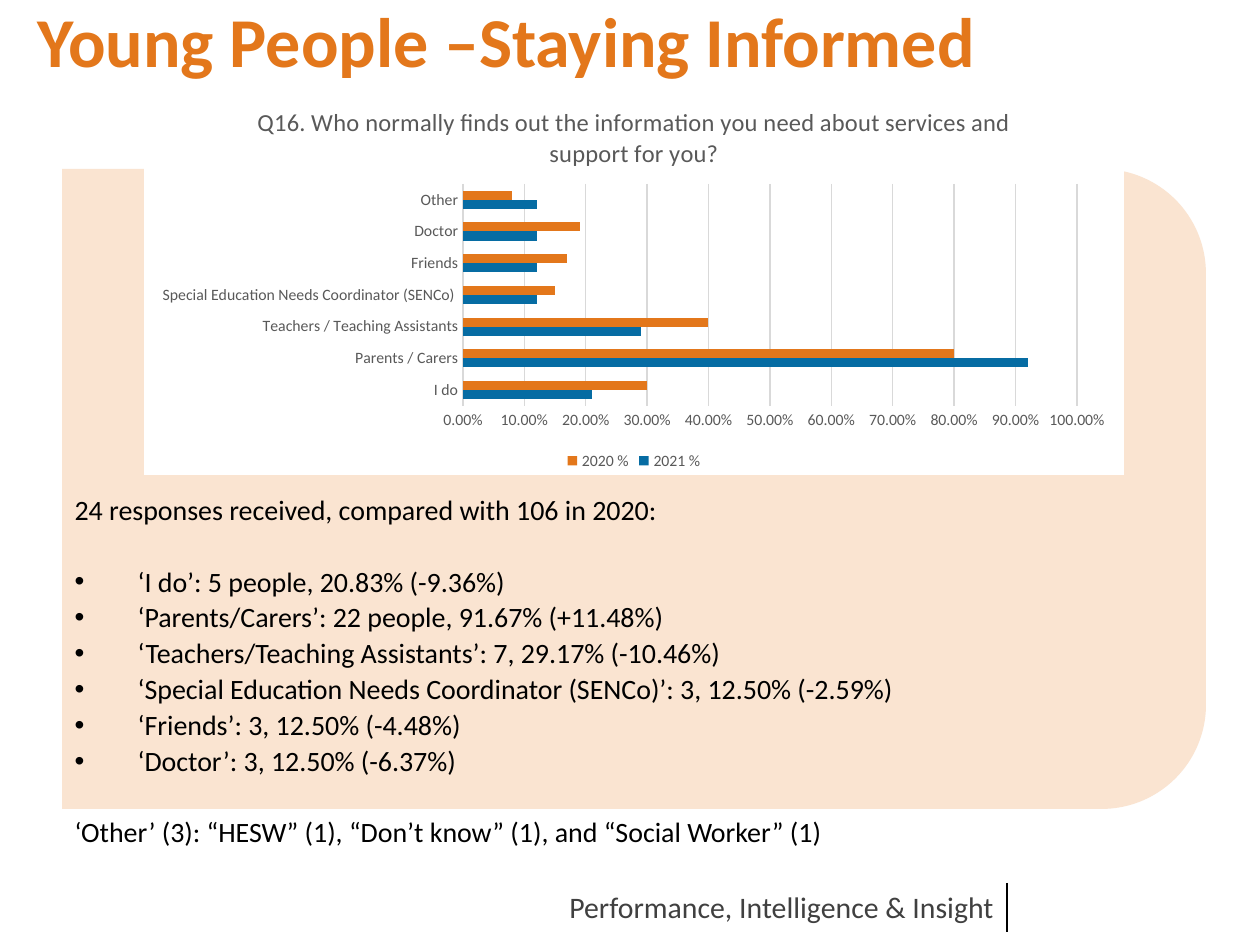
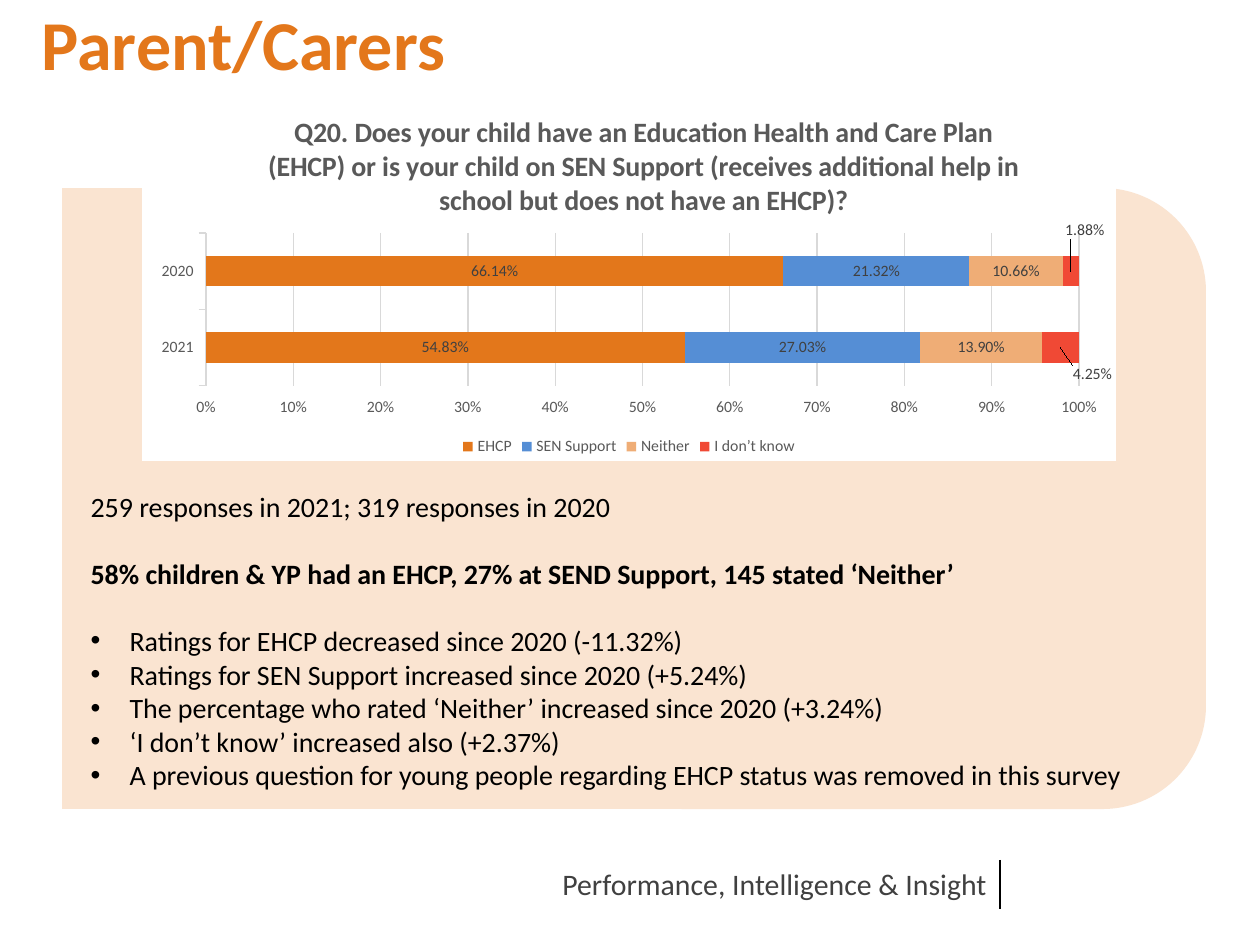
from dataclasses import dataclass

from lxml import etree
from pptx import Presentation
from pptx.chart.chart import Chart
from pptx.chart.data import CategoryChartData
from pptx.dml.color import RGBColor
from pptx.enum.chart import XL_CHART_TYPE as ChartType
from pptx.enum.chart import XL_LABEL_POSITION as LabelPosition
from pptx.enum.chart import XL_LEGEND_POSITION as LegendPosition
from pptx.enum.chart import XL_TICK_MARK as TickMark
from pptx.enum.shapes import MSO_CONNECTOR as Connector
from pptx.enum.shapes import MSO_SHAPE as Shape
from pptx.enum.text import MSO_ANCHOR as Anchor
from pptx.enum.text import MSO_AUTO_SIZE as AutoSize
from pptx.enum.text import PP_ALIGN as Align
from pptx.oxml import parse_xml
from pptx.oxml.ns import nsdecls, qn
from pptx.slide import Slide
from pptx.text.text import Font
from pptx.util import Emu, Pt

# Shared style
FONT = "Calibri"
ORANGE = RGBColor(0xE3, 0x77, 0x1B)
PEACH = RGBColor(0xFA, 0xE4, 0xD1)
BLUE = RGBColor(0x06, 0x6C, 0xA3)
SKY = RGBColor(0x55, 0x8E, 0xD5)
APRICOT = RGBColor(0xEF, 0xAD, 0x76)
RED = RGBColor(0xF0, 0x49, 0x35)
BLACK = RGBColor(0, 0, 0)
CHARCOAL = RGBColor(0x40, 0x40, 0x40)
GREY = RGBColor(0x59, 0x59, 0x59)
GRID_GREY = RGBColor(0xD9, 0xD9, 0xD9)

PX_PER_INCH = 126
PANEL_LEFT, PANEL_RIGHT, PANEL_BOTTOM = 62, 1206, 809
FOOTER_TEXT = "Performance, Intelligence & Insight"
NO_LEADERS = (
    f'<c:extLst {nsdecls("c")}><c:ext uri="{{CE6537A1-D6FC-4f65-9D91-7224C49458BB}}" '
    'xmlns:c15="http://schemas.microsoft.com/office/drawing/2012/chart">'
    '<c15:showLeaderLines val="0"/></c:ext></c:extLst>')


def px(length: int) -> Emu:
    return Emu(round(length * 914400 / PX_PER_INCH))


@dataclass
class Box:
    left: int
    top: int
    width: int
    height: int

    def emu(self) -> tuple[Emu, Emu, Emu, Emu]:
        return px(self.left), px(self.top), px(self.width), px(self.height)


@dataclass
class Line:
    text: str
    bullet: bool = False
    bold: bool = False
    new_block: bool = False


@dataclass
class BodyStyle:
    box: Box
    indent: int
    line_spacing: float
    gap: float
    block_gap: float


@dataclass
class Series:
    name: str
    values: tuple[float, ...]
    color: RGBColor


@dataclass
class Question:
    """Title, plot and label offsets are px inside the chart box."""
    box: Box
    kind: ChartType
    title: str
    title_size: int
    title_bold: bool
    title_at: tuple[int, int]
    plot: Box
    tick: TickMark
    axis_format: str
    categories: tuple[str, ...]
    series: tuple[Series, ...]
    # (point index, x shift, y shift) for labels of the last series
    moved_labels: tuple[tuple[int, int, int], ...] = ()


@dataclass
class Page:
    title: str
    title_box: Box
    panel_top: int
    footer_left: int
    footer_top: int
    question: Question
    body_style: BodyStyle
    lines: tuple[Line, ...]


def style(font: Font, size: int, color: RGBColor, bold: bool = False) -> None:
    font.name, font.size, font.bold = FONT, Pt(size), bold
    font.color.rgb = color


# Panel, footer and text
def draw_panel(slide: Slide, top: int) -> None:
    height = PANEL_BOTTOM - top
    halves = ((Shape.RECTANGLE, PANEL_LEFT, 813),
              (Shape.ROUNDED_RECTANGLE, 580, PANEL_RIGHT - 580))
    for kind, left, width in halves:
        half = slide.shapes.add_shape(kind, *Box(left, top, width, height).emu())
        half.shadow.inherit = False
        half.fill.solid()
        half.fill.fore_color.rgb = PEACH
        half.line.fill.background()


def draw_footer(slide: Slide, left: int, top: int) -> None:
    frame = slide.shapes.add_textbox(*Box(left, top, 518, 49).emu()).text_frame
    frame.word_wrap = True
    frame.text = FOOTER_TEXT
    frame.paragraphs[0].alignment = Align.JUSTIFY
    style(frame.paragraphs[0].font, 17, CHARCOAL)
    x = px(left + 450)
    rule = slide.shapes.add_connector(Connector.STRAIGHT, x, px(top), x, px(top + 49))
    rule.line.color.rgb = BLACK
    rule.line.width = Pt(0.75)
    etree.SubElement(rule._element.spPr, qn("a:effectLst"))


def place(slide: Slide, index: int, box: Box):
    """Move a template placeholder above the panel and return its text frame."""
    holder = slide.placeholders[index]
    holder.left, holder.top, holder.width, holder.height = box.emu()
    slide.shapes._spTree.append(holder._element)
    frame = holder.text_frame
    frame.auto_size = AutoSize.NONE
    frame.vertical_anchor = Anchor.TOP
    return frame


def write_title(slide: Slide, text: str, box: Box) -> None:
    frame = place(slide, 0, box)
    frame.text = text
    frame.paragraphs[0].alignment = Align.LEFT
    style(frame.paragraphs[0].font, 40, ORANGE, True)


def write_body(slide: Slide, look: BodyStyle, lines: tuple[Line, ...]) -> None:
    frame = place(slide, 1, look.box)
    for number, line in enumerate(lines):
        paragraph = frame.add_paragraph() if number else frame.paragraphs[0]
        paragraph.text = line.text
        paragraph.line_spacing = look.line_spacing
        gap = look.block_gap if line.new_block else look.gap
        paragraph.space_before = Pt(gap if number else 0)
        properties = paragraph._p.get_or_add_pPr()
        indent = px(look.indent) if line.bullet else 0
        properties.set("marL", str(indent))
        properties.set("indent", str(-indent))
        if line.bullet:
            etree.SubElement(properties, qn("a:buChar")).set("char", "•")
        else:
            etree.SubElement(properties, qn("a:buNone"))
        style(paragraph.font, 16, BLACK, line.bold)


# Charts
def set_layout(parent, index: int, **settings: object) -> None:
    for old in parent.findall(qn("c:layout")):
        parent.remove(old)
    items = "".join(f'<c:{key} val="{value}"/>' for key, value in settings.items())
    parent.insert(index, parse_xml(
        f'<c:layout {nsdecls("c")}><c:manualLayout>{items}</c:manualLayout></c:layout>'))


def format_axes(chart: Chart, question: Question) -> None:
    for axis in (chart.category_axis, chart.value_axis):
        axis.major_tick_mark = question.tick
        axis.minor_tick_mark = TickMark.NONE
        style(axis.tick_labels.font, 9, GREY)
    outline = chart.category_axis.format.line
    grid = chart.value_axis.major_gridlines.format.line
    for line in (outline, grid):
        line.color.rgb = GRID_GREY
        line.width = Pt(0.75)
    chart.value_axis.format.line.fill.background()
    chart.value_axis.tick_labels.number_format = question.axis_format
    chart.value_axis.tick_labels.number_format_is_linked = False


def format_title(chart: Chart, question: Question) -> None:
    title = chart.chart_title
    title.text_frame.text = question.title
    style(title.text_frame.paragraphs[0].font, question.title_size, GREY, question.title_bold)
    x, y = question.title_at
    set_layout(title._element, 1, xMode="edge", yMode="edge",
               x=x / question.box.width, y=y / question.box.height)


def label_bars(chart: Chart, question: Question) -> None:
    for series in chart.plots[0].series:
        labels = series.data_labels
        labels.show_value = True
        labels.position = LabelPosition.CENTER
        labels.number_format = "0.00%"
        labels.number_format_is_linked = False
        style(labels.font, 9, CHARCOAL)
        labels._element.append(parse_xml(NO_LEADERS))
    points = chart.plots[0].series[-1].points
    for index, x, y in question.moved_labels:
        label = points[index].data_label
        label.position = LabelPosition.CENTER
        style(label.font, 9, CHARCOAL)
        set_layout(label._dLbl, 1, x=x / question.box.width, y=y / question.box.height)


def draw_chart(slide: Slide, question: Question) -> None:
    data = CategoryChartData(number_format="0.00%")
    data.categories = question.categories
    for entry in question.series:
        data.add_series(entry.name, entry.values)
    box, plot = question.box, question.plot
    chart = slide.shapes.add_chart(question.kind, *box.emu(), data).chart
    style(chart.font, 10, BLACK)
    chart._chartSpace.find(qn("c:chart")).addnext(parse_xml(
        f'<c:spPr {nsdecls("c", "a")}><a:solidFill><a:srgbClr val="FFFFFF"/></a:solidFill>'
        "<a:ln><a:noFill/></a:ln></c:spPr>"))
    format_title(chart, question)
    format_axes(chart, question)
    chart.has_legend = True
    chart.legend.position = LegendPosition.BOTTOM
    chart.legend.include_in_layout = False
    style(chart.legend.font, 9, GREY)

    bars = chart.plots[0]
    stacked = question.kind == ChartType.BAR_STACKED_100
    bars.gap_width, bars.overlap, bars.vary_by_categories = 150, 100 if stacked else 0, False
    for series, entry in zip(bars.series, question.series):
        series.format.fill.solid()
        series.format.fill.fore_color.rgb = entry.color
    if stacked:
        label_bars(chart, question)
    set_layout(chart._chartSpace.chart.plotArea, 0,
               layoutTarget="inner", xMode="edge", yMode="edge",
               x=plot.left / box.width, y=plot.top / box.height,
               w=plot.width / box.width, h=plot.height / box.height)


# Content
INFORMED = Page(
    "Young People –Staying Informed", Box(25, -9, 1142, 116), 169, 557, 883,
    Question(
        Box(144, 87, 980, 388), ChartType.BAR_CLUSTERED,
        "Q16. Who normally finds out the information you need about services and support for you?",
        14, False, (109, 14), Box(319, 97, 614, 222), TickMark.NONE, "0.00%",
        ("I do", "Parents / Carers", "Teachers / Teaching Assistants",
         "Special Education Needs Coordinator (SENCo) ", "Friends", "Doctor", "Other"),
        (Series("2021 %", (0.21, 0.92, 0.29, 0.12, 0.12, 0.12, 0.12), BLUE),
         Series("2020 %", (0.3, 0.8, 0.4, 0.15, 0.17, 0.19, 0.08), ORANGE))),
    BodyStyle(Box(62, 490, 1144, 241), 63, 0.9, 3.2, 23.7),
    (Line("24 responses received, compared with 106 in 2020:"),
     Line("‘I do’: 5 people, 20.83% (-9.36%)", bullet=True, new_block=True),
     Line("‘Parents/Carers’: 22 people, 91.67% (+11.48%)", bullet=True),
     Line("‘Teachers/Teaching Assistants’: 7, 29.17% (-10.46%)", bullet=True),
     Line("‘Special Education Needs Coordinator (SENCo)’: 3, 12.50% (-2.59%)", bullet=True),
     Line("‘Friends’: 3, 12.50% (-4.48%)", bullet=True),
     Line("‘Doctor’: 3, 12.50% (-6.37%)", bullet=True),
     Line("‘Other’ (3): “HESW” (1), “Don’t know” (1), and “Social Worker” (1)", new_block=True)))

CARERS = Page(
    "Parent/Carers", Box(29, -6, 1142, 93), 188, 550, 860,
    Question(
        Box(142, 97, 974, 364), ChartType.BAR_STACKED_100,
        "Q20. Does your child have an Education Health and Care Plan (EHCP) or is your child on "
        "SEN Support (receives additional help in school but does not have an EHCP)?",
        16, True, (121, 11), Box(64, 136, 873, 153), TickMark.OUTSIDE, "0%",
        ("2021", "2020"),
        (Series("EHCP", (0.5483, 0.6614), ORANGE),
         Series("SEN Support", (0.2703, 0.2132), SKY),
         Series("Neither", (0.139, 0.1066), APRICOT),
         Series("I don’t know", (0.0425, 0.0188), RED)),
        ((0, 32, 27), (1, 14, -41))),
    BodyStyle(Box(78, 483, 1128, 352), 39, 1.0, 0, 19.2),
    (Line("259 responses in 2021; 319 responses in 2020"),
     Line("58% children & YP had an EHCP, 27% at SEND Support, 145 stated ‘Neither’",
          bold=True, new_block=True),
     Line("Ratings for EHCP decreased since 2020 (-11.32%)", bullet=True, new_block=True),
     Line("Ratings for SEN Support increased since 2020 (+5.24%)", bullet=True),
     Line("The percentage who rated ‘Neither’ increased since 2020 (+3.24%)", bullet=True),
     Line("‘I don’t know’ increased also (+2.37%)", bullet=True),
     Line("A previous question for young people regarding EHCP status was removed in this survey",
          bullet=True)))


def main() -> None:
    deck = Presentation()
    deck.slide_width, deck.slide_height = px(1260), px(945)
    for page in (INFORMED, CARERS):
        slide = deck.slides.add_slide(deck.slide_layouts[1])
        draw_panel(slide, page.panel_top)
        draw_footer(slide, page.footer_left, page.footer_top)
        write_title(slide, page.title, page.title_box)
        draw_chart(slide, page.question)
        write_body(slide, page.body_style, page.lines)
    deck.save("out.pptx")


if __name__ == "__main__":
    main()
